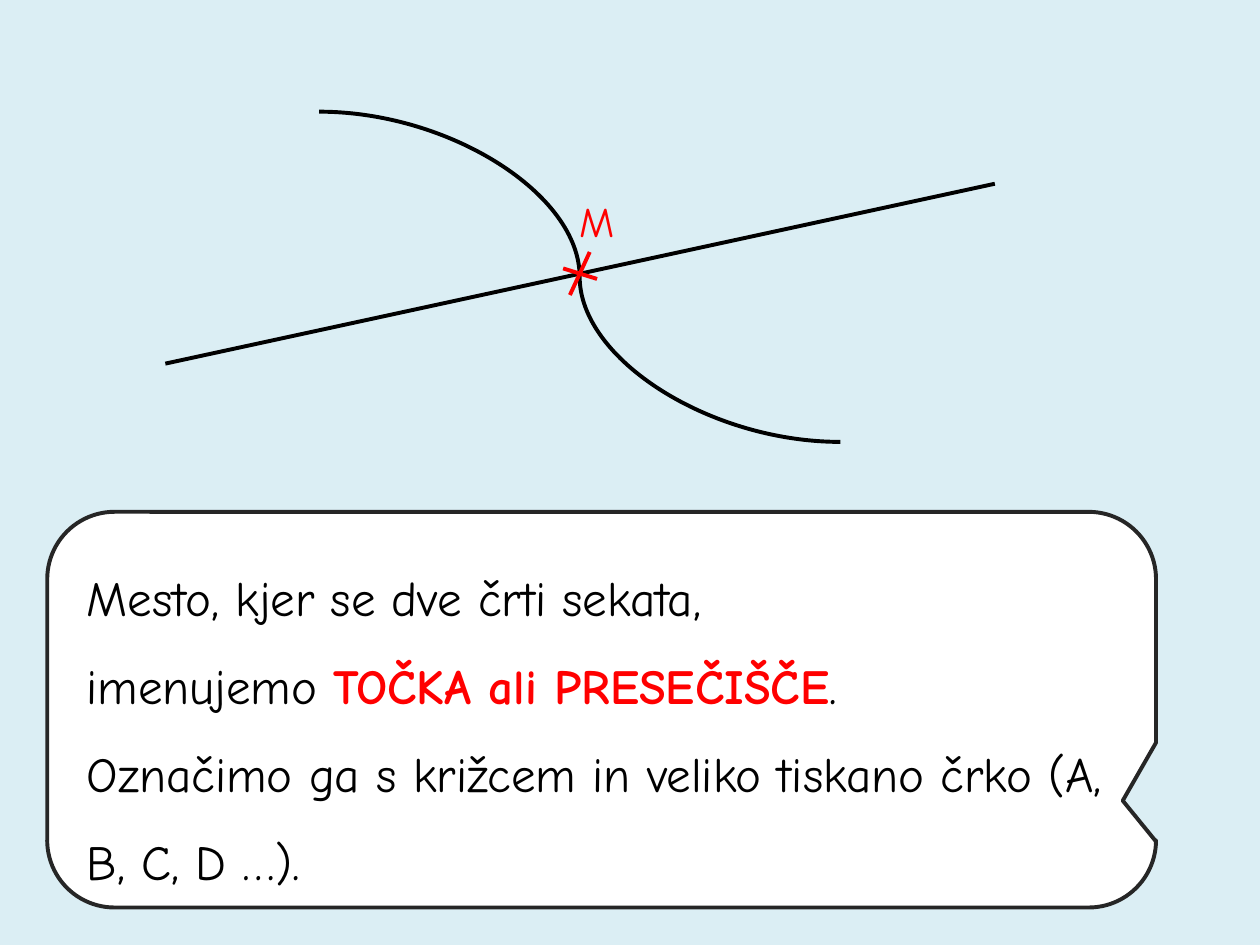
from lxml import etree
from pptx import Presentation
from pptx.dml.color import RGBColor
from pptx.enum.shapes import MSO_CONNECTOR, MSO_SHAPE
from pptx.enum.text import MSO_AUTO_SIZE, PP_ALIGN
from pptx.oxml.ns import qn
from pptx.util import Pt

STRAIGHT = MSO_CONNECTOR.STRAIGHT
CURVE = MSO_CONNECTOR.CURVE
CALLOUT = MSO_SHAPE.ROUNDED_RECTANGULAR_CALLOUT
GROW = MSO_AUTO_SIZE.SHAPE_TO_FIT_TEXT
LEFT = PP_ALIGN.LEFT
CENTER = PP_ALIGN.CENTER

BLACK = RGBColor(0x00, 0x00, 0x00)
RED = RGBColor(0xFF, 0x00, 0x00)
WHITE = RGBColor(0xFF, 0xFF, 0xFF)
GRAY = RGBColor(0x26, 0x26, 0x26)
SKY = RGBColor(0xDB, 0xEE, 0xF4)

FONT = "Comic Neue"
WEIGHT = Pt(2.25)


def add_line(slide, kind, start, end, color):
    ends = [Pt(n) for n in start + end]
    line = slide.shapes.add_connector(kind, *ends)
    line.line.color.rgb = color
    line.line.width = WEIGHT
    etree.SubElement(line._element.spPr, qn("a:effectLst"))


def add_bubble(slide, box, adjust):
    shape = slide.shapes.add_shape(CALLOUT, *[Pt(n) for n in box])
    shape.shadow.inherit = False
    shape.fill.solid()
    shape.fill.fore_color.rgb = WHITE
    shape.line.color.rgb = GRAY
    shape.line.width = WEIGHT
    for i, value in enumerate(adjust):
        shape.adjustments[i] = value


def add_run(para, text, size, color, bold=False):
    run = para.add_run()
    run.text = text
    run.font.name = FONT
    run.font.size = Pt(size)
    run.font.bold = bold
    run.font.color.rgb = color


def add_text(slide, box, lines, size, align=LEFT, wrap=True, space=1.0):
    frame = slide.shapes.add_textbox(*[Pt(n) for n in box]).text_frame
    frame.word_wrap = wrap
    frame.auto_size = GROW
    for i, runs in enumerate(lines):
        para = frame.add_paragraph() if i else frame.paragraphs[0]
        para.alignment = align
        para.line_spacing = space
        for run in runs:
            add_run(para, run[0], size, *run[1:])


def main():
    deck = Presentation()
    deck.slide_width = Pt(720)
    deck.slide_height = Pt(540)
    slide = deck.slides.add_slide(deck.slide_layouts[6])
    slide.background.fill.solid()
    slide.background.fill.fore_color.rgb = SKY

    add_line(slide, STRAIGHT, (94.5, 207.8), (568.5, 105), BLACK)
    add_line(slide, CURVE, (182.3, 63.8), (480.2, 252.5), BLACK)
    add_line(slide, STRAIGHT, (337, 144), (325.7, 168.6), RED)
    add_line(slide, STRAIGHT, (341.2, 159.4), (321.8, 153.4), RED)
    add_text(slide, (323.3, 108, 36, 36), [[("M", RED)]], 24, CENTER, False)

    add_bubble(slide, (27, 292.5, 633.6, 226.1), (0.47, 0.23, 0.17))
    lines = [
        [("Mesto, kjer se dve črti sekata,", BLACK)],
        [("imenujemo ", BLACK), ("TOČKA ali PRESEČIŠČE", RED, True),
         (".", BLACK)],
        [("Označimo ga s križcem in veliko tiskano črko (A, B, C, D …).",
          BLACK)],
    ]
    add_text(slide, (42.5, 303.8, 623.5, 211), lines, 28, space=1.5)
    deck.save("out.pptx")


if __name__ == "__main__":
    main()
